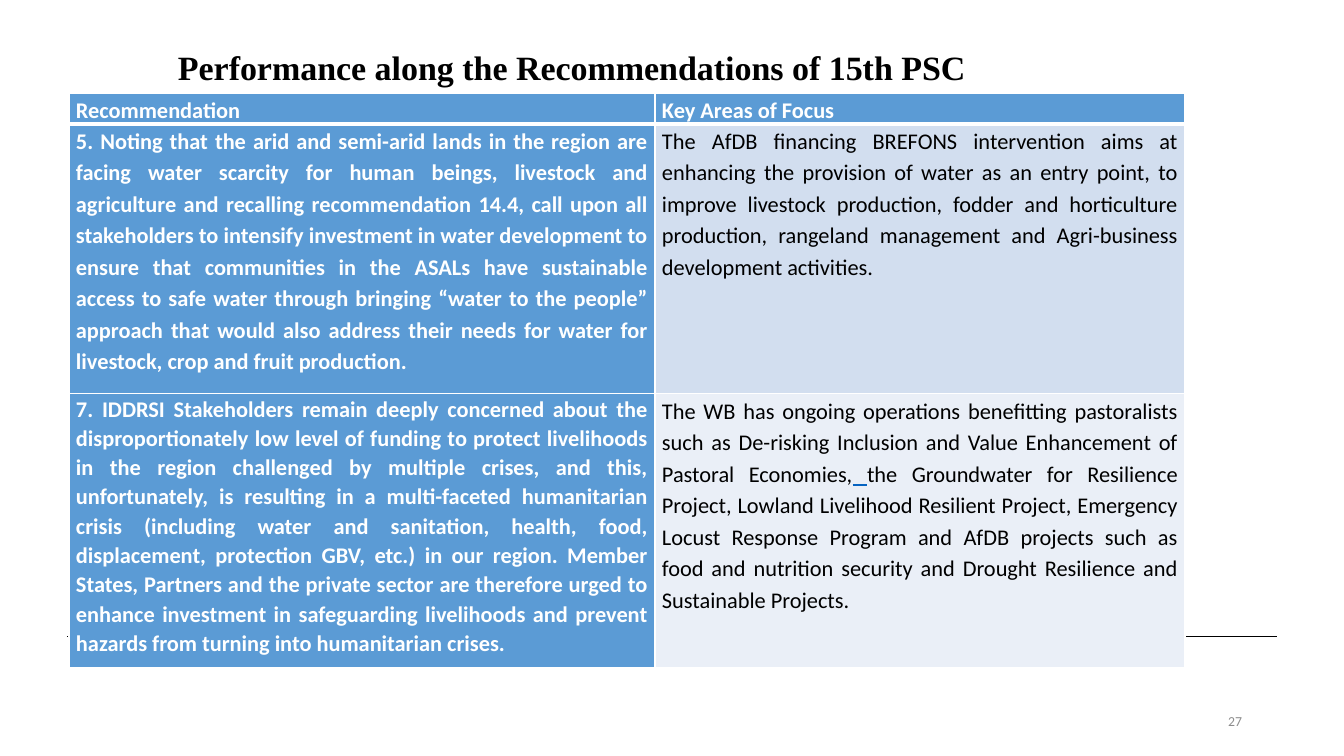
from lxml import etree
from pptx import Presentation, util as u
from pptx.dml.color import RGBColor
from pptx.enum import shapes, text
from pptx.oxml import ns


def px(n):
    return u.Emu(round(n * 914400 / 100.8))


def add_run(p, words, size, color, font="Calibri", bold=False, underline=False):
    r = p.add_run()
    r.text = words
    r.font.size = u.Pt(size)
    r.font.name = font
    r.font.bold = bold
    r.font.underline = underline
    r.font.color.rgb = RGBColor.from_string(color)


WHITE, BLACK, BLUE, LINK = "FFFFFF", "000000", "5B9BD5", "0563C1"
LEFT, JUST = text.PP_ALIGN.LEFT, text.PP_ALIGN.JUSTIFY

prs = Presentation()
prs.slide_width, prs.slide_height = px(1344), px(756)
s = prs.slides.add_slide(prs.slide_layouts[6])

# Footer rule
rule = s.shapes.add_connector(shapes.MSO_CONNECTOR.STRAIGHT, px(67), px(636), px(1277), px(636))
rule.line.color.rgb = RGBColor.from_string(BLACK)
rule.line.width = u.Pt(0.25)
etree.SubElement(rule._element.spPr, ns.qn("a:effectLst"))

# Title
title = s.shapes.add_textbox(px(157), px(40), px(995), px(52))
tf = title.text_frame
tf.word_wrap = True
tf.vertical_anchor = text.MSO_ANCHOR.MIDDLE
tf.margin_left, tf.margin_top = px(21), px(11)
p = tf.paragraphs[0]
p.line_spacing = 0.9
add_run(p, "Performance along the Recommendations of 15th PSC", 24.3, BLACK,
        "Times New Roman", bold=True)

# Slide number
number = s.shapes.add_textbox(px(950), px(701), px(302), px(40))
tf = number.text_frame
tf.word_wrap = True
tf.vertical_anchor = text.MSO_ANCHOR.MIDDLE
p = tf.paragraphs[0]
p.alignment = text.PP_ALIGN.RIGHT
add_run(p, "27", 9.8, "8C8C8C")

# Table content: fill, text colour, alignment, line spacing, runs
rows = [
    [(BLUE, WHITE, LEFT, 1.15, ["Recommendation"]),
     (BLUE, WHITE, LEFT, 1.15, ["Key Areas of Focus"])],
    [(BLUE, WHITE, JUST, 1.15, [
        "5. Noting that the arid and semi-arid lands in the region are facing water scarcity "
        "for human beings, livestock and agriculture and recalling recommendation 14.4, call "
        "upon all stakeholders to intensify investment in water development to ensure that "
        "communities in the ASALs have sustainable access to safe water through bringing "
        "“water to the people” approach that would also address their needs for water for "
        "livestock, crop and fruit production."]),
     ("D2DEEF", BLACK, JUST, 1.15, [
        "The AfDB financing BREFONS intervention aims at enhancing the provision of water as "
        "an entry point, to improve livestock production, fodder and horticulture production, "
        "rangeland management and Agri-business development activities."])],
    [(BLUE, WHITE, JUST, 1.07, [
        "7. IDDRSI Stakeholders remain deeply concerned about the disproportionately low level "
        "of funding to protect livelihoods in the region challenged by multiple crises, and "
        "this, unfortunately, is resulting in a multi-faceted humanitarian crisis (including "
        "water and sanitation, health, food, displacement, protection GBV, etc.) in our region. "
        "Member States, Partners and the private sector are therefore urged to enhance "
        "investment in safeguarding livelihoods and prevent hazards from turning into "
        "humanitarian crises."]),
     ("EAEFF7", BLACK, JUST, 1.15, [
        "The WB has ongoing operations benefitting pastoralists such as De-risking Inclusion "
        "and Value Enhancement of Pastoral Economies,",
        " ",
        "the Groundwater for Resilience Project, Lowland Livelihood Resilient Project, "
        "Emergency Locust Response Program and AfDB projects such as food and nutrition "
        "security and Drought Resilience and Sustainable Projects."])],
]

# Table
widths, heights = [586, 530], [24, 270, 274]
table = s.shapes.add_table(3, 2, px(69), px(93), px(sum(widths)), px(sum(heights))).table
table.first_row = table.horz_banding = False
for column, width in zip(table.columns, widths):
    column.width = px(width)
for row, height in zip(table.rows, heights):
    row.height = px(height)

for i, row in enumerate(rows):
    for j, (fill, color, align, spacing, runs) in enumerate(row):
        cell = table.cell(i, j)
        cell.margin_left = cell.margin_right = px(7)
        cell.margin_top = cell.margin_bottom = 0
        # White borders, thick between the header and the body
        tcPr = cell._tc.get_or_add_tcPr()
        for side in "LRTB":
            thick = (i, side) in [(0, "B"), (1, "T")]
            ln = etree.SubElement(tcPr, ns.qn("a:ln" + side), w=str(u.Pt(3 if thick else 1)))
            solid = etree.SubElement(ln, ns.qn("a:solidFill"))
            etree.SubElement(solid, ns.qn("a:srgbClr"), val=WHITE)
        cell.fill.solid()
        cell.fill.fore_color.rgb = RGBColor.from_string(fill)
        p = cell.text_frame.paragraphs[0]
        p.alignment = align
        p.line_spacing = spacing
        p.space_after = u.Pt(10 if spacing == 1.15 else 0)
        for words in runs:
            gap = words == " "
            add_run(p, words, 16, LINK if gap else color, bold=color == WHITE, underline=gap)

prs.save("out.pptx")
